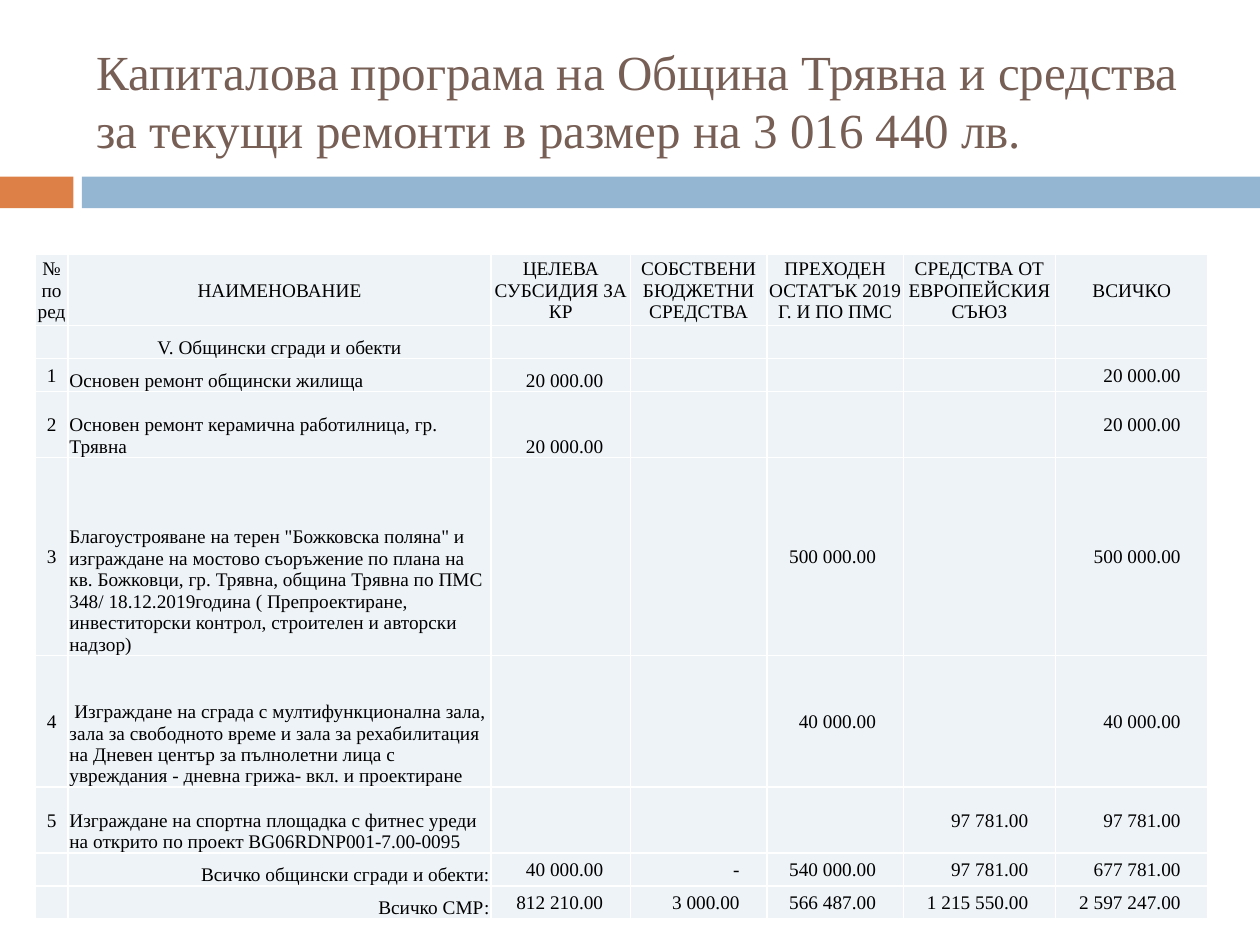
from lxml.etree import SubElement
from pptx import Presentation
from pptx.dml.color import RGBColor
from pptx.enum.shapes import MSO_SHAPE
from pptx.enum.text import MSO_ANCHOR, PP_ALIGN
from pptx.oxml.ns import qn
from pptx.util import Cm, Pt

TITLE = "Капиталова програма на Община Трявна и средства за текущи ремонти в размер на 3 016 440 лв."
HEADER = ["№ по ред", "НАИМЕНОВАНИЕ", "ЦЕЛЕВА СУБСИДИЯ ЗА КР", "СОБСТВЕНИ БЮДЖЕТНИ СРЕДСТВА",
          "ПРЕХОДЕН ОСТАТЪК 2019 Г. И ПО ПМС", "СРЕДСТВА ОТ ЕВРОПЕЙСКИЯ СЪЮЗ", "ВСИЧКО"]
SECTION = ["", "V. Общински сгради и обекти", "", "", "", "", ""]
ITEMS = [
    ["1", "Основен ремонт общински жилища", "20 000.00", "", "", "", "20 000.00"],
    ["2", "Основен ремонт керамична работилница, гр. Трявна", "20 000.00", "", "", "", "20 000.00"],
    ["3", "Благоустрояване на терен \"Божковска поляна\" и изграждане на мостово съоръжение по плана "
          "на кв. Божковци, гр. Трявна, община Трявна по ПМС 348/ 18.12.2019година ( Препроектиране, "
          "инвеститорски контрол, строителен и авторски надзор)",
     "", "", "500 000.00", "", "500 000.00"],
    ["4", " Изграждане на сграда с мултифункционална зала, зала за свободното време и зала за "
          "рехабилитация на Дневен център за пълнолетни лица с увреждания - дневна грижа- вкл. и "
          "проектиране",
     "", "", "40 000.00", "", "40 000.00"],
    ["5", "Изграждане на спортна площадка с фитнес уреди на открито по проект BG06RDNP001-7.00-0095",
     "", "", "", "97 781.00", "97 781.00"],
]
TOTALS = [
    ["", "Всичко общински сгради и обекти:", "40 000.00", "-", "540 000.00", "97 781.00", "677 781.00"],
    ["", "Всичко СМР:", "812 210.00", "3 000.00", "566 487.00", "1 215 550.00", "2 597 247.00"],
]
ROWS = [HEADER, SECTION, *ITEMS, *TOTALS]
ROW_UNITS = [2, 1, 1, 2, 6, 4, 2, 1, 1]
COL_WIDTHS = [0.66, 8.53, 2.81, 2.75, 2.75, 3.07, 3.07]
TABLE_LEFT, TABLE_TOP, TABLE_HEIGHT = 0.71, 5.13, 13.3
BARS = [("orange", 0, 1.48), ("blue", 1.65, 23.75)]

COLORS = {"orange": "DD8047", "blue": "94B6D2", "title": "775F55",
          "cell": "EEF3F7", "border": "FFFFFF", "text": "000000"}
FONT = "Times New Roman"


def color(name):
    return RGBColor.from_string(COLORS[name])


def set_font(p, size, name):
    p.font.name, p.font.size = FONT, Pt(size)
    p.font.color.rgb = color(name)


def add_borders(cell):
    tcPr = cell._tc.get_or_add_tcPr()
    for i, side in enumerate(("lnL", "lnR", "lnT", "lnB")):
        ln = SubElement(tcPr, qn(f"a:{side}"), w=str(Pt(1)))
        fill = SubElement(ln, qn("a:solidFill"))
        SubElement(fill, qn("a:srgbClr"), val=COLORS["border"])
        tcPr.insert(i, ln)


def cell_layout(row, col):
    """Alignment, anchor and right margin in cm, by the kind of row and column."""
    if row is HEADER or col == 0:
        return PP_ALIGN.CENTER, MSO_ANCHOR.MIDDLE, 0.03
    if col == 1:
        align = (PP_ALIGN.CENTER if row is SECTION else
                 PP_ALIGN.RIGHT if row in TOTALS else PP_ALIGN.LEFT)
        return align, MSO_ANCHOR.BOTTOM, 0.03
    anchor = MSO_ANCHOR.BOTTOM if col == 2 and row in ITEMS else MSO_ANCHOR.MIDDLE
    return PP_ALIGN.RIGHT, anchor, 0.55


def fill_cell(cell, row, col):
    align, cell.vertical_anchor, right = cell_layout(row, col)
    cell.margin_left, cell.margin_right = Cm(0.03), Cm(right)
    cell.margin_top, cell.margin_bottom = Cm(0.03), 0
    cell.fill.solid()
    cell.fill.fore_color.rgb = color("cell")
    add_borders(cell)
    p = cell.text_frame.paragraphs[0]
    p.text, p.alignment = row[col], align
    set_font(p, 11, "text")
    if not row[col]:
        # an empty line takes its height from the end mark
        SubElement(p._p, qn("a:endParaRPr"), sz="1100")


def main():
    prs = Presentation()
    prs.slide_width, prs.slide_height = Cm(25.4), Cm(19.05)
    s = prs.slides.add_slide(prs.slide_layouts[6])

    for name, left, width in BARS:
        sp = s.shapes.add_shape(MSO_SHAPE.RECTANGLE, Cm(left), Cm(3.56), Cm(width), Cm(0.64))
        sp.shadow.inherit = False
        sp.fill.solid()
        sp.fill.fore_color.rgb = color(name)
        sp.line.fill.background()

    tf = s.shapes.add_textbox(Cm(1.69), Cm(0.64), Cm(22.66), Cm(2.75)).text_frame
    tf.word_wrap, tf.vertical_anchor = True, MSO_ANCHOR.MIDDLE
    p = tf.paragraphs[0]
    p.text = TITLE
    set_font(p, 28, "title")

    table = s.shapes.add_table(len(ROWS), len(HEADER), Cm(TABLE_LEFT), Cm(TABLE_TOP),
                               Cm(sum(COL_WIDTHS)), Cm(TABLE_HEIGHT)).table
    table.first_row = table.horz_banding = False
    for column, width in zip(table.columns, COL_WIDTHS):
        column.width = Cm(width)
    for i, (row, units) in enumerate(zip(ROWS, ROW_UNITS)):
        table.rows[i].height = Cm(TABLE_HEIGHT * units / sum(ROW_UNITS))
        for j in range(len(row)):
            fill_cell(table.cell(i, j), row, j)

    prs.save("out.pptx")


if __name__ == "__main__":
    main()
